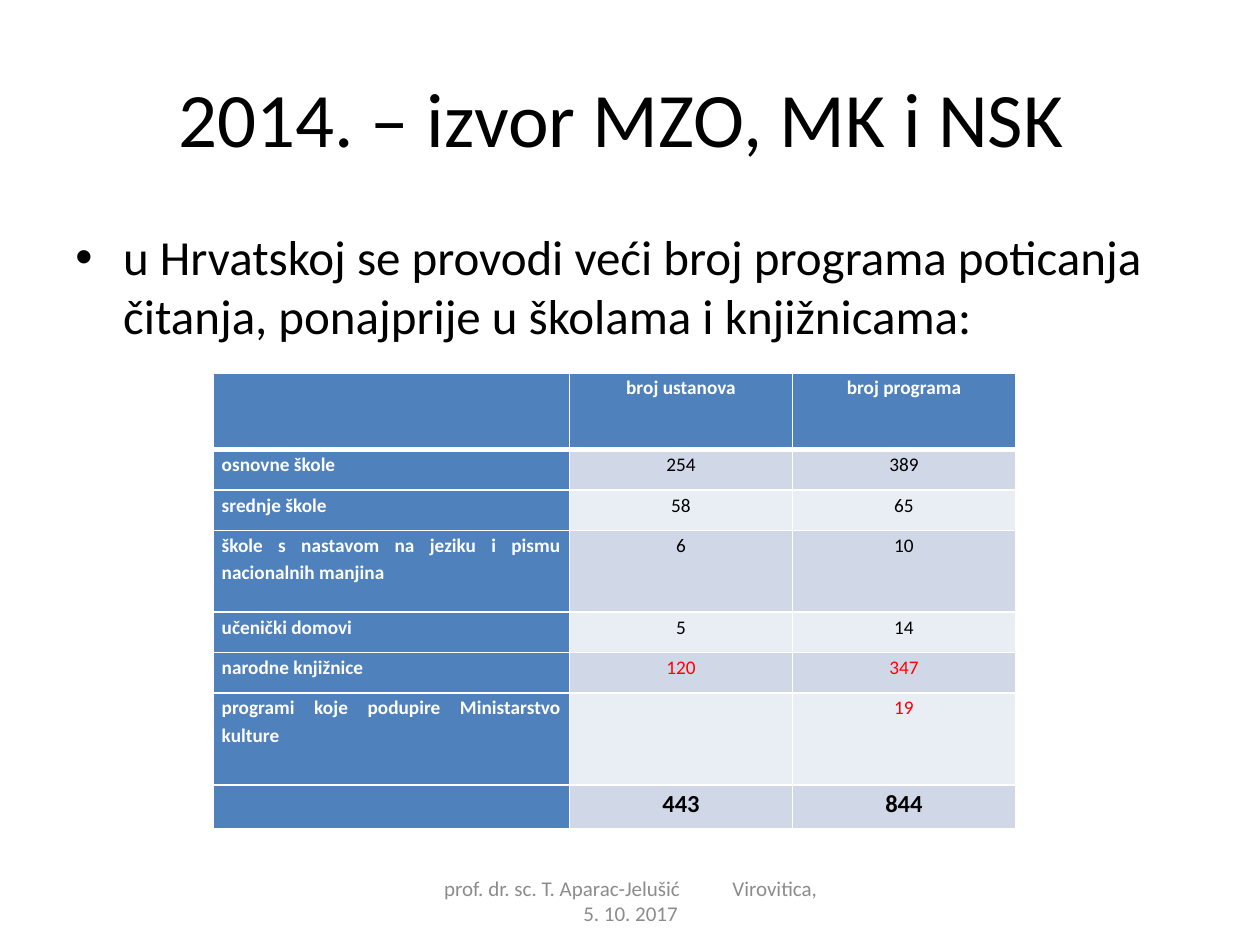
from lxml import etree
from pptx import Presentation
from pptx.dml.color import RGBColor
from pptx.enum.text import MSO_ANCHOR, PP_ALIGN
from pptx.oxml.ns import qn
from pptx.util import Inches, Pt

CENTER, JUSTIFY, LEFT = PP_ALIGN.CENTER, PP_ALIGN.JUSTIFY, PP_ALIGN.LEFT
MIDDLE, TOP = MSO_ANCHOR.MIDDLE, MSO_ANCHOR.TOP
TITLE_ONLY = 5
FONT = "Calibri"
WHITE, BLACK, RED, GREY = "FFFFFF", "000000", "FF0000", "8C8C8C"
BLUE, BANDS = "4F81BD", ("E9EDF4", "D0D8E8")

COLUMN_WIDTHS = (2.83, 1.77, 1.77)
ROW_HEIGHTS = (0.61, 0.32, 0.32, 0.65, 0.32, 0.32, 0.73, 0.35)
ROWS = (
    ("", "broj ustanova", "broj programa"),
    ("osnovne škole", "254", "389"),
    ("srednje škole", "58", "65"),
    ("škole s nastavom na jeziku i pismu nacionalnih manjina", "6", "10"),
    ("učenički domovi", "5", "14"),
    ("narodne knjižnice", "120", "347"),
    ("programi koje podupire Ministarstvo kulture", "", "19"),
    ("", "443", "844"),
)
RED_ROWS = (5, 6)
TOTAL_ROW = len(ROWS) - 1


def color(value):
    return RGBColor.from_string(value)


def set_attributes(target, values):
    for name, value in values.items():
        setattr(target, name, value)


def format_font(font, size, value, bold=False):
    set_attributes(font, {"name": FONT, "size": Pt(size), "bold": bold})
    font.color.rgb = color(value)


def place(shape, left, top, width, height):
    set_attributes(shape, {
        "left": Inches(left), "top": Inches(top),
        "width": Inches(width), "height": Inches(height),
    })


def fill_text(shape, parts, size, value, alignment, anchor):
    set_attributes(shape.text_frame, {"word_wrap": True, "vertical_anchor": anchor})
    paragraph = shape.text_frame.paragraphs[0]
    paragraph.alignment = alignment
    for part in parts:
        run = paragraph.add_run()
        run.text = part
        format_font(run.font, size, value)
    return paragraph


def add_text(slide, box, *text_format):
    shape = slide.shapes.add_textbox(*map(Inches, box))
    return fill_text(shape, *text_format)


def add_bullet(paragraph, indent):
    properties = paragraph._p.get_or_add_pPr()
    properties.set("marL", str(Inches(indent)))
    properties.set("indent", str(-Inches(indent)))
    etree.SubElement(properties, qn("a:buFont"), typeface="Arial")
    etree.SubElement(properties, qn("a:buChar"), char="•")


def widen_space(run, points):
    run._r.get_or_add_rPr().set("spc", str(points * 100))


def add_borders(cell, widths):
    properties = cell._tc.get_or_add_tcPr()
    for side, width in widths.items():
        line = etree.SubElement(properties, qn(f"a:ln{side}"), w=str(Pt(width)))
        fill = etree.SubElement(line, qn("a:solidFill"))
        etree.SubElement(fill, qn("a:srgbClr"), val=WHITE)


def format_cell(cell, text, row, column):
    heading = row == 0 or column == 0
    add_borders(cell, {
        "L": 1, "R": 1, "T": 3 if row == 1 else 1, "B": 3 if row == 0 else 1,
    })
    cell.fill.solid()
    cell.fill.fore_color.rgb = color(BLUE if heading else BANDS[row % 2])
    set_attributes(cell, {
        "margin_left": Inches(0.07), "margin_right": Inches(0.07),
        "margin_top": 0, "margin_bottom": 0,
    })
    cell.text = text
    paragraph = cell.text_frame.paragraphs[0]
    set_attributes(paragraph, {
        "alignment": CENTER if column or row == 0 else JUSTIFY,
        "line_spacing": 1.15,
    })
    value = WHITE if heading else RED if row in RED_ROWS else BLACK
    size = 14 if row == TOTAL_ROW else 11
    for item in (paragraph, *paragraph.runs):
        format_font(item.font, size, value, heading or row == TOTAL_ROW)


def add_programme_table(slide, left, top):
    table = slide.shapes.add_table(
        len(ROWS), len(COLUMN_WIDTHS), Inches(left), Inches(top),
        Inches(sum(COLUMN_WIDTHS)), Inches(sum(ROW_HEIGHTS)),
    ).table
    for column, width in zip(table.columns, COLUMN_WIDTHS):
        column.width = Inches(width)
    for row, height in zip(table.rows, ROW_HEIGHTS):
        row.height = Inches(height)
    for row, texts in enumerate(ROWS):
        for column, text in enumerate(texts):
            format_cell(table.cell(row, column), text, row, column)


def main():
    presentation = Presentation()
    presentation.slide_width = Inches(10)
    presentation.slide_height = Inches(7.5)
    slide = presentation.slides.add_slide(presentation.slide_layouts[TITLE_ONLY])

    title = slide.shapes.title
    place(title, 0.5, 0.3, 9, 1.25)
    fill_text(title, ["2014. – izvor MZO, MK i NSK "], 44, BLACK, CENTER, MIDDLE)

    statement = add_text(
        slide, (0.5, 1.75, 9, 4.95),
        ["u Hrvatskoj se provodi veći broj programa poticanja čitanja, "
         "ponajprije u školama i knjižnicama:"],
        28, BLACK, LEFT, TOP,
    )
    add_bullet(statement, 0.38)

    add_programme_table(slide, 1.69, 2.96)

    footer = add_text(
        slide, (3.42, 6.95, 3.17, 0.4),
        ["prof. dr. sc. T. Aparac-Jelušić", " ", "Virovitica, 5. 10. 2017"],
        12, GREY, CENTER, MIDDLE,
    )
    widen_space(footer.runs[1], 27)

    presentation.save("out.pptx")


if __name__ == "__main__":
    main()
